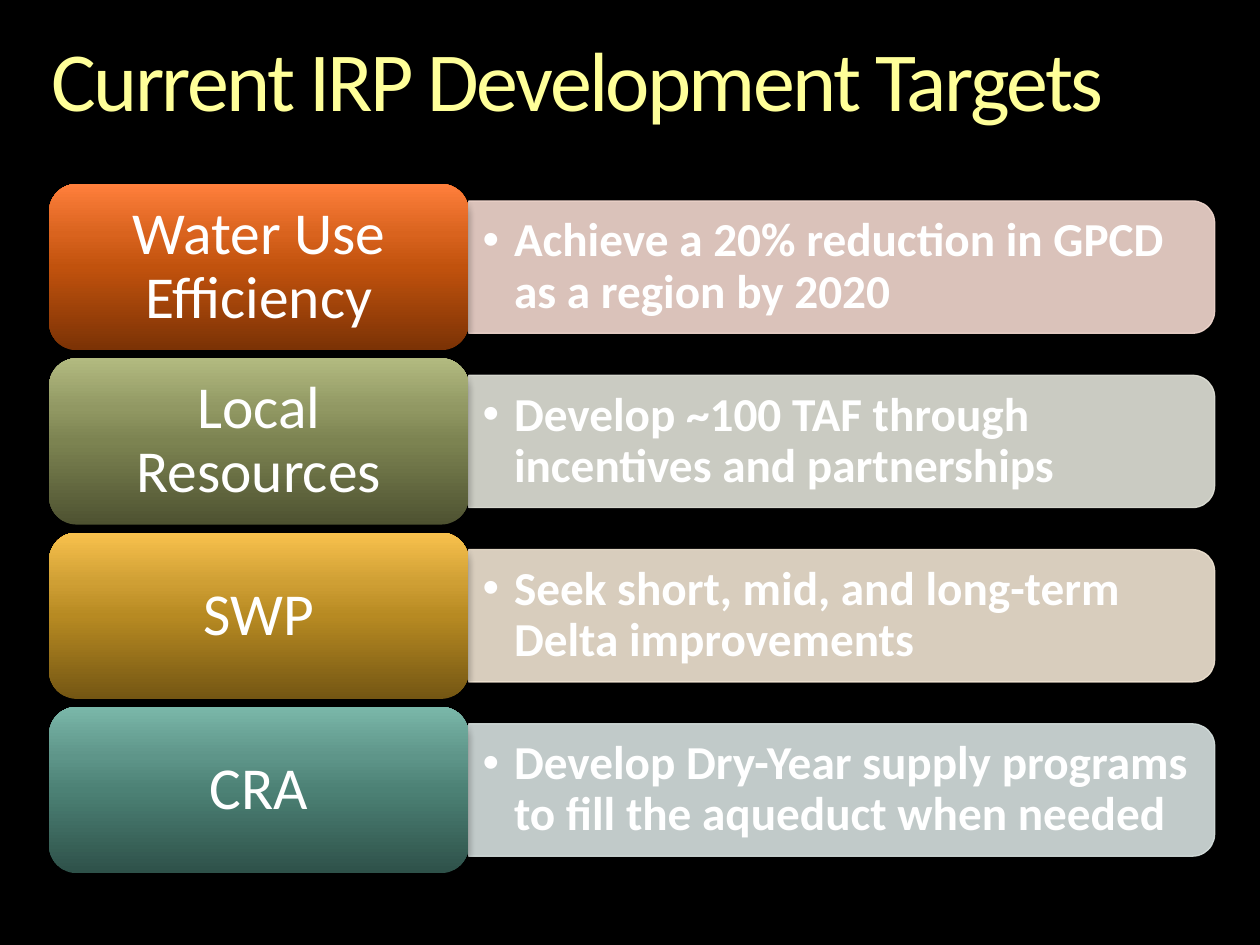
from dataclasses import dataclass

from lxml import etree
from pptx import Presentation
from pptx import util as u
from pptx.dml import color
from pptx.enum import shapes, text
from pptx.oxml import ns

PX = 9144


@dataclass(frozen=True)
class Theme:
    font: str = "Calibri"
    background: str = "000000"
    title: str = "FFFF99"
    ink: str = "FFFFFF"
    title_size: int = 48
    label_size: int = 34
    detail_size: int = 27
    panel_alpha: int = 90
    shadow_alpha: int = 35


THEME = Theme()
STOPS = (0, 50, 70, 100)
TARGETS = [
    ("Water Use Efficiency", "Achieve a 20% reduction in GPCD as a region by 2020",
     "F2D8CF", ("7B3205", "C1520D", "D9631E", "FF7F3C")),
    ("Local Resources", "Develop ~100 TAF through incentives and partnerships",
     "E1E2D8", ("4E5231", "7C8351", "919863", "B2BA80")),
    ("SWP", "Seek short, mid, and long-term Delta improvements",
     "F0E4D2", ("745613", "B78A22", "CF9F34", "F8C14D")),
    ("CRA", "Develop Dry-Year supply programs to fill the aqueduct when needed",
     "D7E1DF", ("2E5149", "4C8175", "5E9589", "7AB7A9")),
]


def px(*lengths):
    return [u.Emu(round(length * PX)) for length in lengths]


def rgb(value):
    return color.RGBColor.from_string(value)


def add_node(parent, tag, **attributes):
    node = etree.SubElement(parent, ns.qn(tag))
    for name, value in attributes.items():
        node.set(name, str(value))
    return node


def add_color(parent, value, alpha=100):
    node = add_node(parent, "a:srgbClr", val=value)
    if alpha < 100:
        add_node(node, "a:alpha", val=alpha * 1000)


def apply(target, values):
    for name, value in values.items():
        setattr(target, name, value)


def write(shape, words, size, ink, margins, anchor, align, bold=False, bullet=None):
    frame = shape.text_frame
    left, top = px(*margins)
    apply(frame, dict(word_wrap=True, auto_size=text.MSO_AUTO_SIZE.NONE,
                      vertical_anchor=anchor, margin_left=left, margin_right=left,
                      margin_top=top, margin_bottom=top))
    para = frame.paragraphs[0]
    apply(para, dict(alignment=align, line_spacing=0.9, space_before=u.Pt(0)))
    if bullet:
        indent = px(25)[0]
        properties = para._p.get_or_add_pPr()
        properties.set("marL", str(indent))
        properties.set("indent", str(-indent))
        add_node(properties, "a:buFont", typeface="Arial")
        add_node(properties, "a:buChar", char=bullet)
    span = para.add_run()
    span.text = words
    apply(span.font, dict(name=THEME.font, size=u.Pt(size), bold=bold))
    span.font.color.rgb = rgb(ink)
    return span


def add_title(page, box, words):
    title = page.shapes.title
    apply(title, dict(zip(("left", "top", "width", "height"), px(*box))))
    span = write(title, words, THEME.title_size, THEME.title, (0, 0),
                 text.MSO_ANCHOR.TOP, text.PP_ALIGN.LEFT)
    span._r.get_or_add_rPr().set("spc", "-150")


def add_panel(page, box, words, tint):
    left, top, width, height = box
    panel = page.shapes.add_shape(
        shapes.MSO_SHAPE.ROUND_2_SAME_RECTANGLE,
        *px(left + (width - height) / 2, top + (height - width) / 2, height, width))
    panel.rotation = 90
    panel.shadow.inherit = False
    panel.line.width = u.Pt(0.75)
    for fill in (panel.fill, panel.line.fill):
        fill.solid()
        fill.fore_color.rgb = rgb(tint)
    for node in panel._element.spPr.iter(ns.qn("a:srgbClr")):
        add_node(node, "a:alpha", val=THEME.panel_alpha * 1000)
    detail = page.shapes.add_textbox(*px(left, top + 5, width - 5, height - 10))
    write(detail, words, THEME.detail_size, THEME.ink, (11, 6),
          text.MSO_ANCHOR.MIDDLE, text.PP_ALIGN.LEFT, bold=True, bullet="•")


def add_label(page, box, words, ramp):
    label = page.shapes.add_shape(shapes.MSO_SHAPE.ROUNDED_RECTANGLE, *px(*box))
    label.line.fill.background()
    label.shadow.inherit = False
    label.fill.gradient()
    gradient = label._element.spPr.find(ns.qn("a:gradFill"))
    for child in list(gradient):
        gradient.remove(child)
    stops = add_node(gradient, "a:gsLst")
    for position, value in zip(STOPS, ramp):
        add_color(add_node(stops, "a:gs", pos=position * 1000), value)
    add_node(gradient, "a:lin", ang=270 * 60000, scaled=0)
    effects = label._element.spPr.find(ns.qn("a:effectLst"))
    shadow = add_node(effects, "a:outerShdw", blurRad=u.Pt(4), dist=u.Pt(3),
                      dir=90 * 60000, rotWithShape=0)
    add_color(shadow, THEME.background, THEME.shadow_alpha)
    write(label, words, THEME.label_size, THEME.ink, (14, 7),
          text.MSO_ANCHOR.MIDDLE, text.PP_ALIGN.CENTER)


def add_targets(page, box, targets):
    left, top, width, height = box
    row_height, panel_height, label_width = 132, 105, 333
    pitch = (height - row_height) / (len(targets) - 1)
    inset = (row_height - panel_height) / 2
    for index, (name, detail, tint, ramp) in enumerate(targets):
        row_top = top + index * pitch
        add_panel(page, (left + label_width, row_top + inset,
                         width - label_width, panel_height), detail, tint)
        add_label(page, (left, row_top, label_width, row_height), name, ramp)


def main():
    deck = Presentation()
    deck.slide_width, deck.slide_height = px(1000, 750)
    page = deck.slides.add_slide(deck.slide_layouts[5])
    page.background.fill.solid()
    page.background.fill.fore_color.rgb = rgb(THEME.background)
    add_targets(page, (39, 146, 925, 547), TARGETS)
    add_title(page, (41, 31, 917, 127), "Current IRP Development Targets")
    deck.save("out.pptx")


if __name__ == "__main__":
    main()
